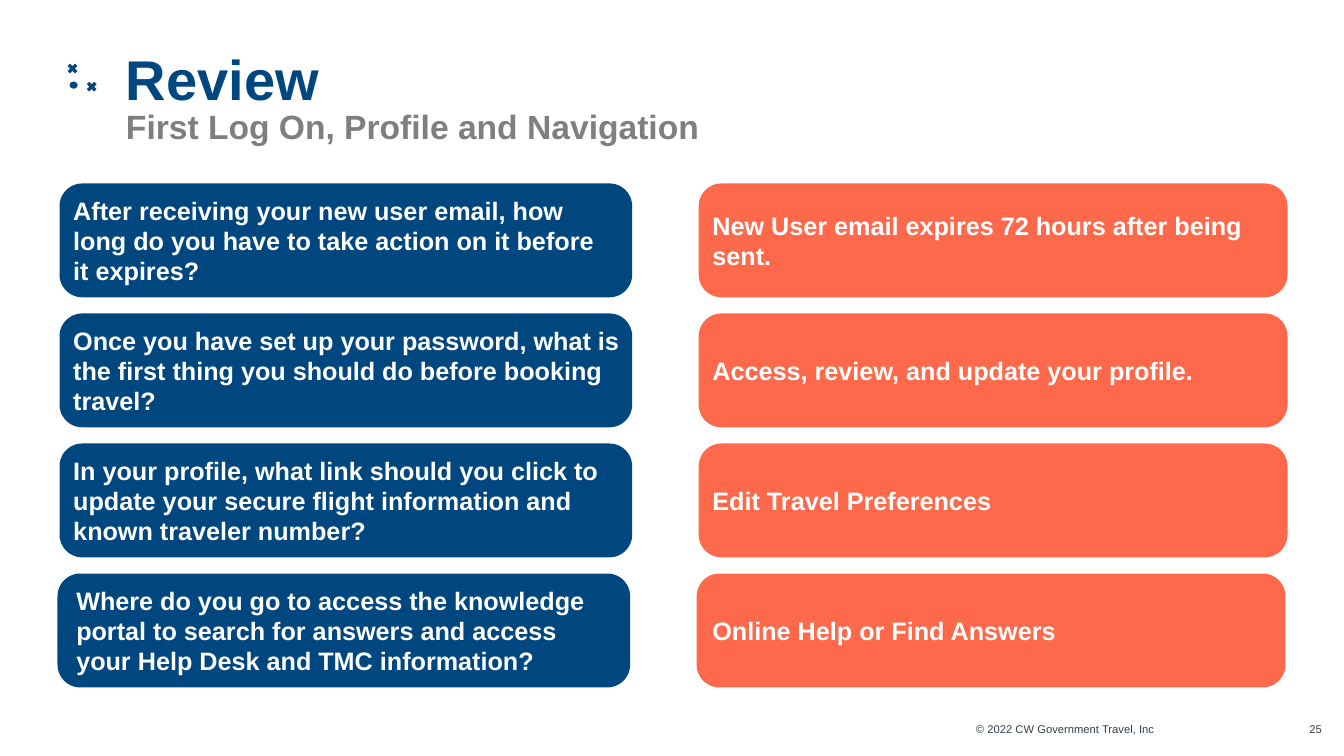
"""Build the review slide with four questions and their answers."""
from lxml import etree
from pptx import Presentation
from pptx.dml.color import RGBColor
from pptx.enum.shapes import MSO_SHAPE
from pptx.enum.text import MSO_ANCHOR, PP_ALIGN
from pptx.util import Inches, Pt

ROUNDED, OVAL, CROSS = MSO_SHAPE.ROUNDED_RECTANGLE, MSO_SHAPE.OVAL, MSO_SHAPE.MATH_MULTIPLY
LEFT, RIGHT = PP_ALIGN.LEFT, PP_ALIGN.RIGHT
TOP, MIDDLE, BOTTOM = MSO_ANCHOR.TOP, MSO_ANCHOR.MIDDLE, MSO_ANCHOR.BOTTOM
COLORS = {"navy": "00467F", "coral": "FF694B", "gray": "7F7F7F",
          "slate": "333F48", "white": "FFFFFF"}
FIRST_ROW, ROW_PITCH, ROW_HEIGHT = 1.82, 1.29, 1.13
QUESTION_LEFT, QUESTION_WIDTH = 0.59, 5.68
ANSWER_LEFT, ANSWER_WIDTH = 6.93, 5.84
FOOTER_TOP, FOOTER_HEIGHT = 7.17, 0.14

prs = Presentation()
prs.slide_width, prs.slide_height = Inches(13.33), Inches(7.5)
slide = prs.slides.add_slide(prs.slide_layouts[6])
shapes = slide.shapes


def add_solid(kind, left, top, width, height, color):
    solid = shapes.add_shape(kind, Inches(left), Inches(top), Inches(width), Inches(height))
    solid.shadow.inherit = False
    solid.fill.solid()
    solid.fill.fore_color.rgb = RGBColor.from_string(COLORS[color])
    solid.line.fill.background()
    return solid


def write(holder, text, styles, bold, anchor, align=LEFT, insets=(0, 0)):
    frame = holder.text_frame
    frame.word_wrap = True
    frame.vertical_anchor = anchor
    frame.margin_left, frame.margin_right = map(Inches, insets)
    frame.margin_top = frame.margin_bottom = 0
    paragraph = frame.paragraphs[0]
    paragraph.text = text
    paragraph.alignment = align
    for run, (size, color) in zip(paragraph.runs, styles):
        run.font.name = "Arial"
        run.font.size = Pt(size)
        run.font.bold = bold
        run.font.color.rgb = RGBColor.from_string(COLORS[color])
    return paragraph


head_outline = [
    (1.05, 0.72), (1.02, 0.65), (0.97, 0.59), (0.90, 0.54), (0.81, 0.52), (0.72, 0.53),
    (0.64, 0.57), (0.59, 0.63), (0.57, 0.70), (0.56, 0.77), (0.53, 0.83), (0.51, 0.88),
    (0.52, 0.90), (0.55, 0.92), (0.55, 0.96), (0.56, 1.01), (0.58, 1.05), (0.62, 1.07),
    (0.70, 1.08), (0.74, 1.11), (0.78, 1.18), (0.87, 1.13), (0.98, 1.07), (0.97, 1.01),
    (1.00, 0.93), (1.04, 0.84)]
idea_route = [(0.73, 0.85), (0.74, 0.81), (0.79, 0.78), (0.85, 0.75), (0.88, 0.71), (0.89, 0.64)]
for points, closed, weight in ((head_outline, True, 3.5), (idea_route, False, 2)):
    builder = shapes.build_freeform(*points[0], scale=Inches(1))
    builder.add_line_segments(points[1:], close=closed)
    stroke = builder.convert_to_shape()
    stroke.shadow.inherit = False
    stroke.fill.background()
    stroke.line.color.rgb = RGBColor.from_string(COLORS["navy"])
    stroke.line.width = Pt(weight)
    line_xml = stroke.line._get_or_add_ln()
    namespace = line_xml.nsmap["a"]
    etree.SubElement(line_xml, f"{{{namespace}}}round")
    if not closed:
        etree.SubElement(line_xml, f"{{{namespace}}}tailEnd", type="triangle", w="med", len="sm")

add_solid(OVAL, 0.69, 0.81, 0.08, 0.07, "navy")
for cross_left, cross_top in ((0.65, 0.61), (0.84, 0.79)):
    add_solid(CROSS, cross_left, cross_top, 0.14, 0.14, "navy")

title = shapes.add_textbox(Inches(1.25), Inches(0.53), Inches(11.53), Inches(0.92))
heading = write(title, "Review\vFirst Log On, Profile and Navigation",
                [(40, "navy"), (24, "gray")], True, BOTTOM)
heading.line_spacing = 0.85

review = [
    ("After receiving your new user email, how long do you have to take action on it "
     "before it expires?", 0.11,
     "New User email expires 72 hours after being sent."),
    ("Once you have set up your password, what is the first thing you should do before "
     "booking travel?", 0.05,
     "Access, review, and update your profile."),
    ("In your profile, what link should you click to update your secure flight "
     "information and known traveler number?", 0.09,
     "Edit Travel Preferences"),
    ("Where do you go to access the knowledge portal to search for answers and access "
     "your Help Desk and TMC information?", 0.09,
     "Online Help or Find Answers"),
]
for row, (question, right_inset, answer) in enumerate(review):
    last = row == len(review) - 1
    shift = -0.02 if last else 0
    cells = (
        (question, QUESTION_LEFT, QUESTION_WIDTH, "navy", (0.12 if last else 0.07, right_inset)),
        (answer, ANSWER_LEFT, ANSWER_WIDTH, "coral", (0.07 - shift, 0)),
    )
    for text, left, width, color, insets in cells:
        card = add_solid(ROUNDED, left + shift, FIRST_ROW + row * ROW_PITCH,
                         width, ROW_HEIGHT, color)
        card.adjustments[0] = 0.2
        write(card, text, [(18, "white")], True, MIDDLE, insets=insets)

for text, left, width in (("© 2022 CW Government Travel, Inc", 8.38, 3.07), ("25", 12.88, 0.23)):
    footer = shapes.add_textbox(Inches(left), Inches(FOOTER_TOP),
                                Inches(width), Inches(FOOTER_HEIGHT))
    write(footer, text, [(8, "slate")], False, TOP, RIGHT)

prs.save("out.pptx")
